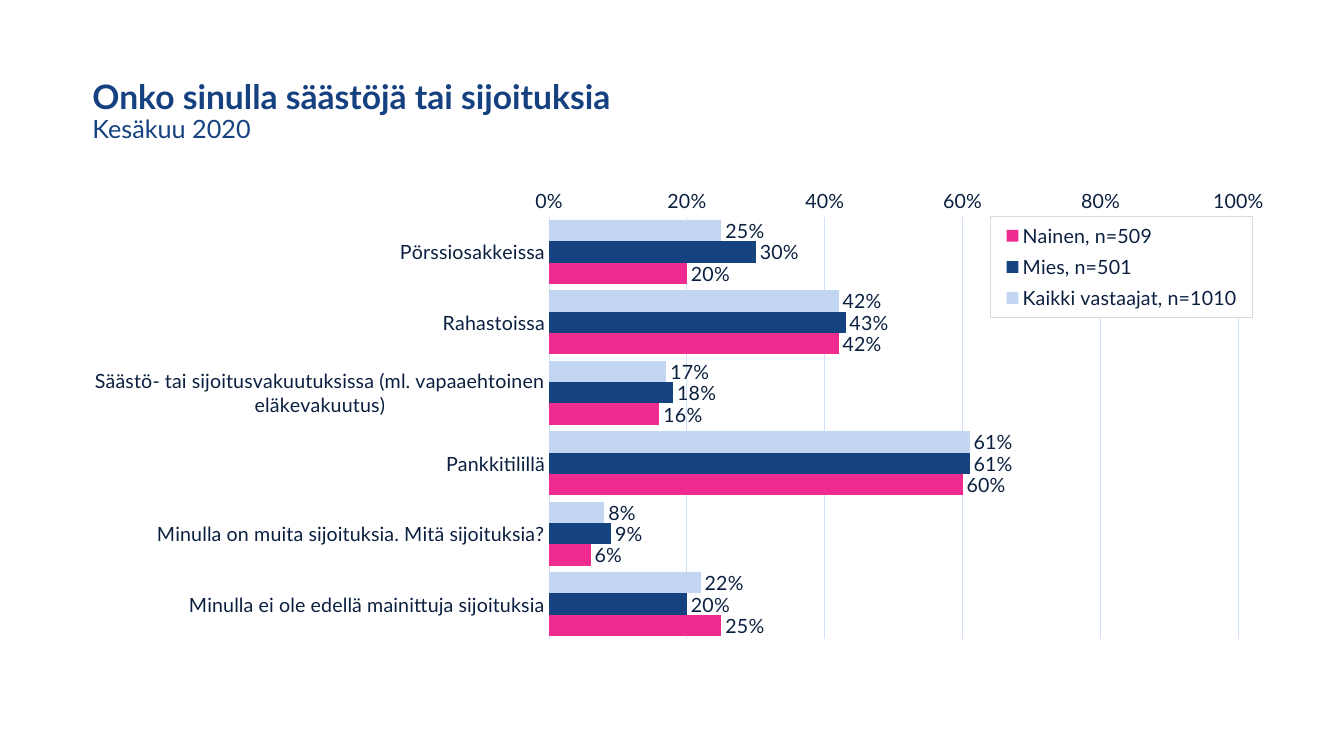
from lxml import etree
from pptx import Presentation
from pptx import util as u
from pptx.chart.data import CategoryChartData
from pptx.dml.color import RGBColor
from pptx.enum import chart as c, text
from pptx.oxml import parse_xml
from pptx.oxml.ns import nsdecls, qn

FONT = "Lato"
TITLE = RGBColor(0x16, 0x41, 0x80)
INK = RGBColor(0x0B, 0x20, 0x40)
GRID = RGBColor(0xD1, 0xE0, 0xF7)
LIGHT = RGBColor(0xC2, 0xD6, 0xF4)
NAVY = RGBColor(0x16, 0x42, 0x80)
PINK = RGBColor(0xEE, 0x2C, 0x90)
WHITE = RGBColor(0xFF, 0xFF, 0xFF)
LEGEND_LINE = RGBColor(0xD9, 0xD9, 0xD9)

CATEGORIES = [
    "Pörssiosakkeissa",
    "Rahastoissa",
    "Säästö- tai sijoitusvakuutuksissa (ml. vapaaehtoinen eläkevakuutus)",
    "Pankkitilillä",
    "Minulla on muita sijoituksia. Mitä sijoituksia?",
    "Minulla ei ole edellä mainittuja sijoituksia",
]
SERIES = [
    ("Kaikki vastaajat, n=1010", LIGHT, [0.25, 0.42, 0.17, 0.61, 0.08, 0.22]),
    ("Mies, n=501", NAVY, [0.30, 0.43, 0.18, 0.61, 0.09, 0.20]),
    ("Nainen, n=509", PINK, [0.20, 0.42, 0.16, 0.60, 0.06, 0.25]),
]


def set_font(font, size, color):
    """Apply the slide's typeface with a size and colour."""
    font.name = FONT
    font.size = u.Pt(size)
    font.color.rgb = color


def set_line(line, color):
    """Give a line format a thin solid colour."""
    line.color.rgb = color
    line.width = u.Pt(0.75)


def manual_layout(x, y, w, h, inner=False):
    """Return a chart layout element in fractions of the chart area."""
    target = '<c:layoutTarget val="inner"/>' if inner else ""
    return parse_xml(
        f'<c:layout {nsdecls("c")}><c:manualLayout>{target}'
        '<c:xMode val="edge"/><c:yMode val="edge"/>'
        f'<c:x val="{x}"/><c:y val="{y}"/><c:w val="{w}"/><c:h val="{h}"/>'
        "</c:manualLayout></c:layout>")


def add_title(s, left, top, width, height):
    """Place the heading and its date line in the given box."""
    tf = s.shapes.add_textbox(*map(u.Pt, (left, top, width, height))).text_frame
    tf.word_wrap = True
    tf.vertical_anchor = text.MSO_ANCHOR.MIDDLE
    p = tf.paragraphs[0]
    p.line_spacing = 0.9
    r = p.add_run()
    r.text = "Onko sinulla säästöjä tai sijoituksia"
    set_font(r.font, 24, TITLE)
    r.font.bold = True
    p.add_line_break()
    r = p.add_run()
    r.text = "Kesäkuu 2020"
    set_font(r.font, 18, TITLE)


def style_legend(chart):
    """Set the boxed legend over the top right of the plot."""
    chart.has_legend = True
    legend = chart.legend
    legend.position = c.XL_LEGEND_POSITION.BOTTOM
    legend.include_in_layout = False
    set_font(legend.font, 14, INK)
    el = legend._element
    for old in el.findall(qn("c:layout")):
        el.remove(old)
    el.find(qn("c:legendPos")).addnext(manual_layout(0.763, 0.06, 0.22, 0.193))
    sp_pr = etree.Element(qn("c:spPr"))
    fill = etree.SubElement(sp_pr, qn("a:solidFill"))
    etree.SubElement(fill, qn("a:srgbClr"), val=str(WHITE))
    ln = etree.SubElement(sp_pr, qn("a:ln"), w=str(u.Pt(0.75)))
    fill = etree.SubElement(ln, qn("a:solidFill"))
    etree.SubElement(fill, qn("a:srgbClr"), val=str(LEGEND_LINE))
    el.find(qn("c:overlay")).addnext(sp_pr)


def style_axes(chart):
    """Set the reversed category axis and the percentage axis."""
    cat, val = chart.category_axis, chart.value_axis
    for axis in (cat, val):
        axis.major_tick_mark = axis.minor_tick_mark = c.XL_TICK_MARK.NONE
        set_font(axis.tick_labels.font, 14, INK)
    cat.reverse_order = True
    set_line(cat.format.line, GRID)
    val.minimum_scale, val.maximum_scale, val.major_unit = 0, 1, 0.2
    val.tick_labels.number_format = "0%"
    val.tick_labels.number_format_is_linked = False
    val.format.line.fill.background()
    val.has_major_gridlines = True
    set_line(val.major_gridlines.format.line, GRID)


def add_savings_chart(s, left, top, width, height):
    """Place the clustered bar chart in the given box."""
    data = CategoryChartData(number_format="0%")
    data.categories = CATEGORIES
    for name, _, values in SERIES:
        data.add_series(name, values)
    chart = s.shapes.add_chart(c.XL_CHART_TYPE.BAR_CLUSTERED,
                               *map(u.Pt, (left, top, width, height)), data).chart
    chart.has_title = False
    set_font(chart.font, 14, INK)
    plot = chart.plots[0]
    plot.vary_by_categories = False
    plot.gap_width, plot.overlap = 30, 0
    for series, (_, color, _) in zip(plot.series, SERIES):
        series.format.fill.solid()
        series.format.fill.fore_color.rgb = color
        labels = series.data_labels
        labels.show_value = True
        labels.number_format = "0%"
        labels.number_format_is_linked = False
        labels.position = c.XL_LABEL_POSITION.OUTSIDE_END
        set_font(labels.font, 14, INK)
    style_axes(chart)
    style_legend(chart)
    area = chart._chartSpace.find(f".//{qn('c:plotArea')}")
    for old in area.findall(qn("c:layout")):
        area.remove(old)
    area.insert(0, manual_layout(0.392, 0.06, 0.579, 0.813, inner=True))


def main():
    """Build the slide and save it."""
    prs = Presentation()
    prs.slide_width, prs.slide_height = u.Pt(960), u.Pt(540)
    s = prs.slides.add_slide(prs.slide_layouts[6])
    add_title(s, 59, 28, 872, 104.5)
    add_savings_chart(s, 59, 132.5, 850.3, 371.5)
    prs.save("out.pptx")


if __name__ == "__main__":
    main()
